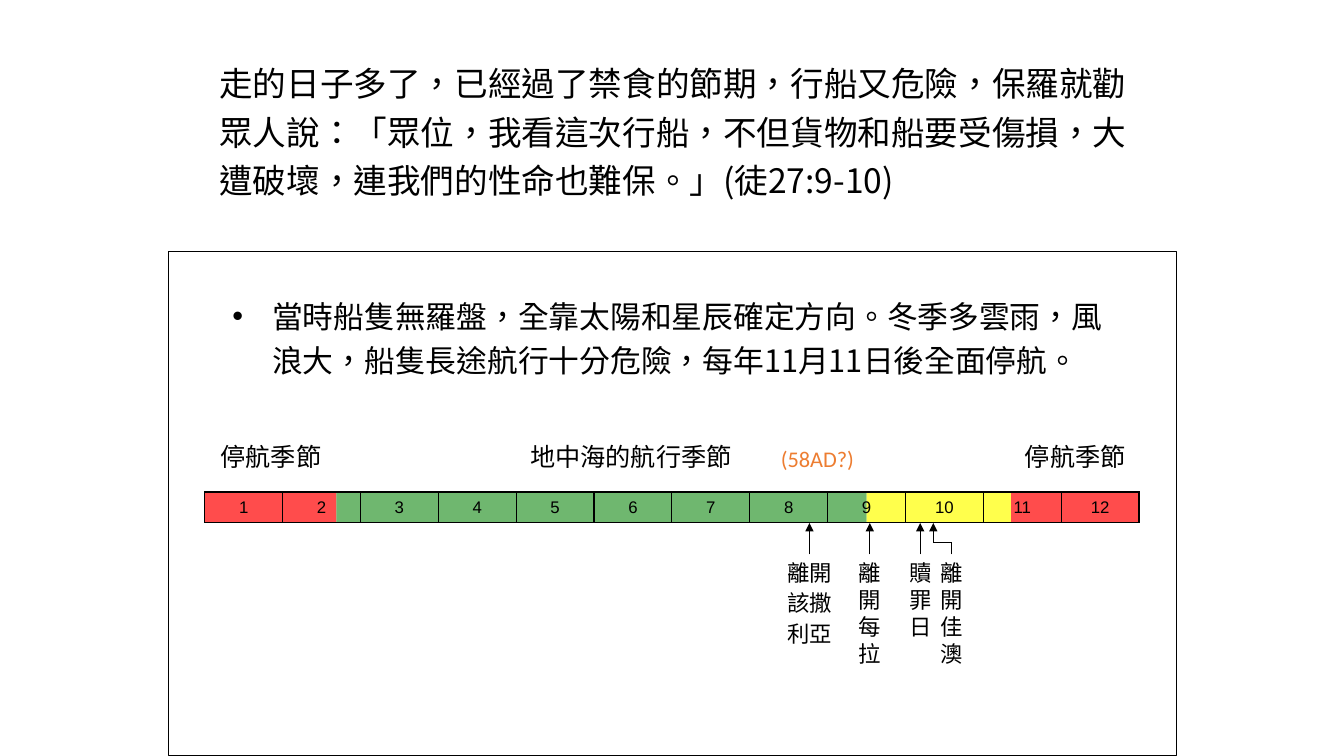
from dataclasses import dataclass

from lxml.etree import SubElement
from pptx import Presentation
from pptx.dml.color import RGBColor
from pptx.enum.shapes import MSO_CONNECTOR as CONN, MSO_SHAPE as SHAPE
from pptx.enum.text import MSO_ANCHOR as ANCHOR, MSO_AUTO_SIZE as AUTO, PP_ALIGN as ALIGN
from pptx.oxml.ns import qn
from pptx.util import Cm, Pt


@dataclass(frozen=True)
class Theme:
    black: str = "000000"
    white: str = "FFFFFF"
    orange: str = "ED7D31"
    red: str = "FF0000"
    green: str = "339933"
    yellow: str = "FFFF00"
    cjk: str = "Noto Sans CJK SC"
    body: str = "Calibri"
    digits: str = "Arial"
    verse_size: float = 24
    note_size: float = 22
    caption_size: float = 18
    label_size: float = 16
    month_size: float = 12
    line_width: float = 0.75
    season_alpha: int = 70


class SlideBuilder:
    def __init__(self, slide, theme):
        self.s, self.t = slide, theme

    def style(self, p, font, size, color=None, align=ALIGN.CENTER):
        p.alignment = align
        for r in p.runs:
            r.font.name, r.font.size = font, Pt(size)
            r.font.color.rgb = RGBColor.from_string(color or self.t.black)
            rPr = r._r.get_or_add_rPr()
            rPr.set("lang", "zh-TW")
            if font == self.t.cjk:
                SubElement(rPr, qn("a:ea")).set("typeface", font)

    def rect(self, x, y, w, h, fill, outlined=False, alpha=None):
        sp = self.s.shapes.add_shape(SHAPE.RECTANGLE, Cm(x), Cm(y), Cm(w), Cm(h))
        sp.shadow.inherit = False
        sp.fill.solid()
        sp.fill.fore_color.rgb = RGBColor.from_string(fill)
        if alpha:
            clr = sp._element.spPr.find(qn("a:solidFill"))[0]
            SubElement(clr, qn("a:alpha")).set("val", str(alpha * 1000))
        if outlined:
            sp.line.color.rgb = RGBColor.from_string(self.t.black)
            sp.line.width = Pt(self.t.line_width)
        else:
            sp.line.fill.background()
        return sp

    def paragraph(self, x, y, w, h, text, size, bullet_indent=None):
        sp = self.s.shapes.add_textbox(Cm(x), Cm(y), Cm(w), Cm(h))
        tf = sp.text_frame
        tf.word_wrap = True
        tf.text = text
        p = tf.paragraphs[0]
        p.line_spacing = 1.2
        self.style(p, self.t.cjk, size, align=ALIGN.LEFT)
        if bullet_indent:
            pPr = p._p.get_or_add_pPr()
            pPr.set("marL", str(Cm(bullet_indent)))
            pPr.set("indent", str(-Cm(bullet_indent)))
            SubElement(pPr, qn("a:buFont")).set("typeface", self.t.digits)
            SubElement(pPr, qn("a:buChar")).set("char", "•")

    def caption(self, center, y, w, h, text, size, color=None):
        sp = self.s.shapes.add_textbox(Cm(center - w / 2), Cm(y), Cm(w), Cm(h))
        tf = sp.text_frame
        tf.word_wrap = False
        tf.text = text
        self.style(tf.paragraphs[0], self.t.body, size, color)

    def label(self, center, y, h, lines, gap=0):
        """White label with stacked characters, centred under its date."""
        w = 0.51 + 0.56 * len(lines[0])
        sp = self.rect(center - w / 2, y, w, h, self.t.white)
        tf = sp.text_frame
        tf.word_wrap = False
        tf.auto_size = AUTO.SHAPE_TO_FIT_TEXT
        tf.vertical_anchor = ANCHOR.TOP
        tf.text = "\n".join(lines)
        for p in tf.paragraphs:
            self.style(p, self.t.body, self.t.label_size)
            p.space_after = Pt(gap)
        return sp

    def line(self, x1, y1, x2, y2, arrow=False, start=None):
        c = self.s.shapes.add_connector(CONN.STRAIGHT, Cm(x1), Cm(y1), Cm(x2), Cm(y2))
        if start is not None:
            c.begin_connect(start, 0)
        c.line.color.rgb = RGBColor.from_string(self.t.black)
        c.line.width = Pt(self.t.line_width)
        spPr = c._element.spPr
        if arrow:
            SubElement(spPr.find(qn("a:ln")), qn("a:tailEnd")).set("type", "triangle")
        SubElement(spPr, qn("a:effectLst"))

    def month_table(self, x, y, w, h, months):
        frame = self.s.shapes.add_table(1, months, Cm(x), Cm(y), Cm(w), Cm(h))
        table = frame.table
        table.first_row = table.horz_banding = False
        for i, cell in enumerate(table.iter_cells(), 1):
            table.columns[i - 1].width = Cm(w / months)
            cell.text = str(i)
            cell.vertical_anchor = ANCHOR.MIDDLE
            self.style(cell.text_frame.paragraphs[0], self.t.digits, self.t.month_size)
            tcPr = cell._tc.get_or_add_tcPr()
            for side in ("lnL", "lnR", "lnT", "lnB"):
                ln = SubElement(tcPr, qn("a:" + side), w=str(Pt(1)))
                fill = SubElement(ln, qn("a:solidFill"))
                SubElement(fill, qn("a:srgbClr")).set("val", self.t.black)
            cell.fill.background()


def main():
    prs = Presentation()
    prs.slide_width, prs.slide_height = Cm(33.87), Cm(19.05)
    t = Theme()
    b = SlideBuilder(prs.slides.add_slide(prs.slide_layouts[6]), t)

    # Frame and verse
    b.rect(4.24, 6.35, 25.4, 12.7, t.white, outlined=True)
    b.paragraph(5.28, 1.27, 23.5, 3.78,
                "走的日子多了，已經過了禁食的節期，行船又危險，保羅就勸眾人說：「眾位，"
                "我看這次行船，不但貨物和船要受傷損，大遭破壞，連我們的性命也難保。」(徒27:9-10)",
                t.verse_size)

    # Sailing seasons behind the twelve months
    left, top, width, height = 5.16, 12.4, 23.55, 0.76
    start = left
    for end, color in ((8.48, t.red), (21.84, t.green), (25.48, t.yellow),
                       (left + width, t.red)):
        b.rect(start, top, end - start, height, color, alpha=t.season_alpha)
        start = end
    b.month_table(left, top, width, height, 12)

    # Dated events with arrows up to the calendar
    label_top, tip = 13.97, 13.18
    for x, h, lines, gap in ((23.19, 2.29, "贖罪日", 0),
                             (21.92, 2.97, "離開每拉", 0),
                             (20.4, 2.49, ("離開", "該撒", "利亞"), 2.4)):
        sp = b.label(x, label_top, h, lines, gap)
        b.line(x, label_top, x, tip, arrow=True, start=sp)

    # Last event, with a bent arrow
    x, bend_x, bend_y = 23.98, 23.52, 13.67
    sp = b.label(x, label_top, 2.97, "離開佳澳")
    b.line(x, label_top, x, bend_y, start=sp)
    b.line(x, bend_y, bend_x, bend_y)
    b.line(bend_x, bend_y, bend_x, tip, arrow=True)

    # Season captions
    for center, w, text in ((15.9, 5.59, "地中海的航行季節"),
                            (27.1, 3.05, "停航季節"), (6.83, 3.05, "停航季節")):
        b.caption(center, 11, w, 1.02, text, t.caption_size)

    # Note and year
    b.paragraph(5.61, 7.19, 22.66, 2.51,
                "當時船隻無羅盤，全靠太陽和星辰確定方向。冬季多雲雨，風浪大，"
                "船隻長途航行十分危險，每年11月11日後全面停航。",
                t.note_size, bullet_indent=1)
    b.caption(20.6, 11.1, 2.39, 0.94, "(58AD?)", t.label_size, t.orange)

    prs.save("out.pptx")


if __name__ == "__main__":
    main()
